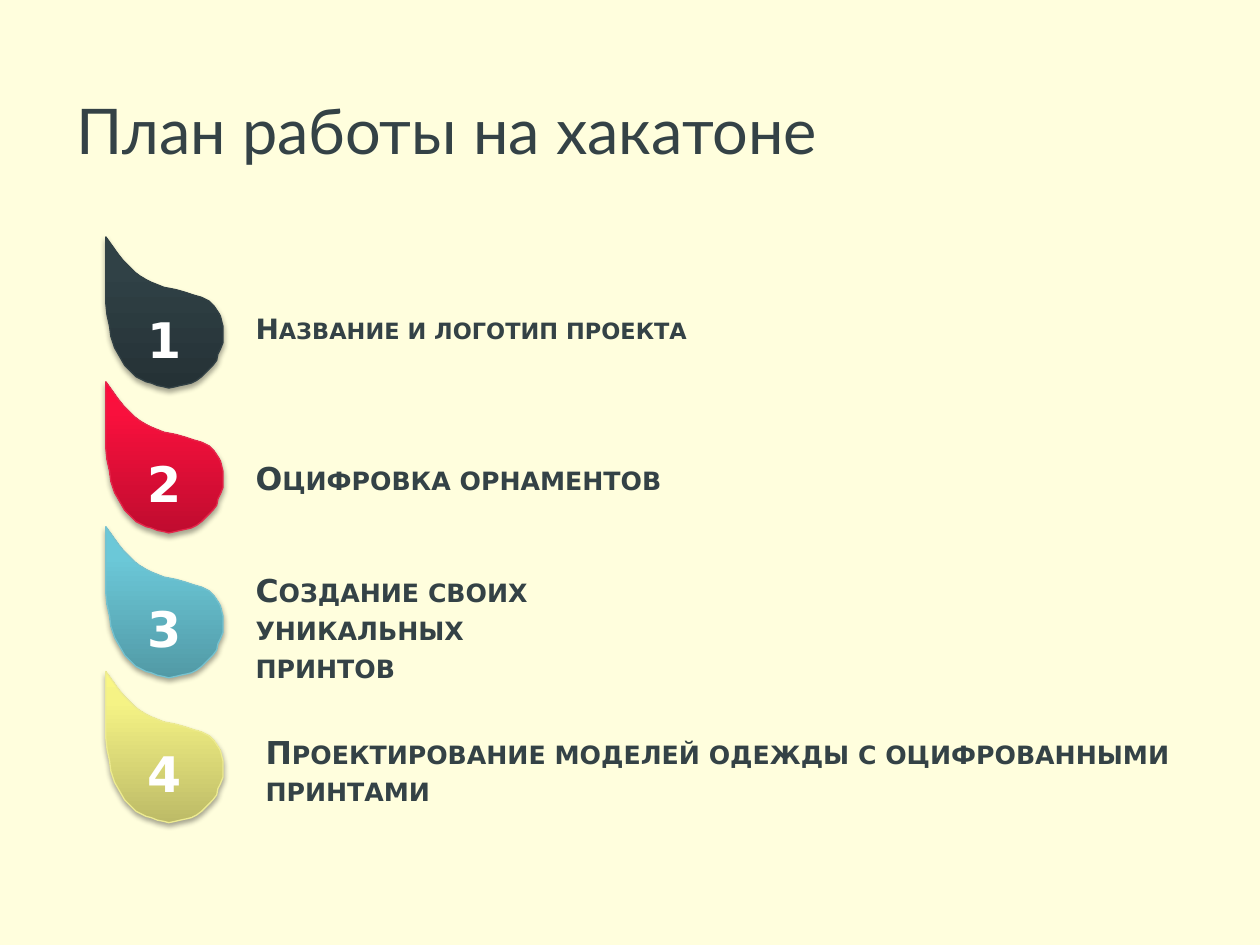
"""Build a slide that lists the four steps of the hackathon plan beside coloured drops."""
from copy import deepcopy

from lxml.etree import SubElement
from pptx import Presentation
from pptx.dml.color import RGBColor
from pptx.enum.shapes import MSO_SHAPE
from pptx.enum.text import MSO_ANCHOR, MSO_AUTO_SIZE, PP_ALIGN
from pptx.oxml.ns import qn
from pptx.util import Inches, Pt

TITLE = "План работы на хакатоне"
STEPS = [
    {"lines": ["Название и логотип проекта"], "drop": "slate",
     "size": 16, "place": (19.3, 32.27, 37, 4.93), "wrap": False},
    {"lines": ["Оцифровка орнаментов"], "drop": "red",
     "size": 18, "place": (19.3, 47.87, 34.3, 5.33), "wrap": False},
    {"lines": ["Создание своих уникальных принтов"], "drop": "teal",
     "size": 18, "place": (19.3, 59.73, 25.4, 13.47), "wrap": True},
    {"lines": ["Проектирование моделей одежды с оцифрованными", "принтами"], "drop": "yellow",
     "size": 18, "place": (20.1, 76.8, 75.6, 9.47), "wrap": True, "align": PP_ALIGN.JUSTIFY},
]
COLOURS = {"paper": "FFFEDD", "ink": "344246", "number": "FFFFFF", "shadow": "000000"}
DROPS = {
    "slate": {"line": "324145", "stops": ["253236", "304146", "304247"]},
    "red": {"line": "E4274B", "stops": ["C00C2F", "F9103D", "FE0B3B"]},
    "teal": {"line": "76C2CF", "stops": ["529AA6", "6BC8D8", "69CADB"]},
    "yellow": {"line": "EDEB91", "stops": ["BDBB67", "F5F385", "F9F684"]},
}
STOP_POSITIONS = [0, 0.8, 1]
DROP_OUTLINE = [
    (0, 0), (10, 14), (14, 19), (19, 24), (23, 28), (27, 31), (32, 34), (36, 36),
    (41, 38), (46, 40), (51, 41), (56, 42), (63, 44), (69, 46), (76, 48), (82, 51),
    (84, 53), (86, 55), (88, 58), (90, 61), (91, 63), (92, 67), (93, 71), (93, 75),
    (93, 80), (93, 84), (91, 89), (89, 93), (88, 98), (85, 102), (82, 105), (79, 108),
    (76, 111), (72, 114), (68, 116), (64, 117), (59, 118), (55, 119), (50, 119.5),
    (46, 119), (41, 118), (36, 116), (32, 115), (28, 113), (24, 111), (21, 108),
    (18, 105), (15, 102), (11, 95), (7, 88), (4, 79), (3, 71), (1, 62), (0, 53), (0, 34),
]
WIDTH, HEIGHT = Inches(10), Inches(7.5)
TITLE_PLACE = (5.1, 8, 71, 11.33)
DROP_LEFT, FIRST_ROW, ROW_STEP = 8.4, 25.07, 15.33
FONT_TITLE = {"name": "Lato", "size": Pt(36), "bold": False}
FONT_NUMBER = {"name": "DejaVu Sans", "size": Pt(28), "bold": True}
FONT_LABEL = {"name": "DejaVu Sans", "bold": True}


def across(percent):
    return round(WIDTH * percent / 100)


def down(percent):
    return round(HEIGHT * percent / 100)


def apply(target, values):
    for name, value in values.items():
        setattr(target, name, value)


def write(frame, lines, font, colour, align=PP_ALIGN.LEFT, small_caps=False):
    for index, line in enumerate(lines):
        para = frame.add_paragraph() if index else frame.paragraphs[0]
        para.alignment = align
        span = para.add_run()
        span.text = line
        apply(span.font, font)
        span.font.color.rgb = RGBColor.from_string(COLOURS[colour])
        if small_caps:
            span.font._element.set("cap", "small")


def add_text(page, place, lines, font, layout, **style):
    left, top, width, height = place
    box = page.shapes.add_textbox(across(left), down(top), across(width), down(height))
    apply(box.text_frame, {"vertical_anchor": MSO_ANCHOR.MIDDLE, **layout})
    write(box.text_frame, lines, font, "ink", **style)


def add_shadow(shape):
    shape.shadow.inherit = False
    effects = shape._element.spPr.find(qn("a:effectLst"))
    shadow = SubElement(effects, qn("a:outerShdw"), blurRad=str(Pt(3.1)),
                        dist=str(Pt(1.8)), dir="5400000", rotWithShape="0")
    colour = SubElement(shadow, qn("a:srgbClr"), val=COLOURS["shadow"])
    SubElement(colour, qn("a:alpha"), val="35000")


def add_drop(page, number, top, look):
    builder = page.shapes.build_freeform(*DROP_OUTLINE[0], scale=WIDTH / 1000)
    builder.add_line_segments(DROP_OUTLINE[1:], close=True)
    drop = builder.convert_to_shape(across(DROP_LEFT), down(top))
    drop.fill.gradient()
    drop.fill.gradient_angle = 90
    stop_list = next(drop._element.iter(qn("a:gsLst")))
    stop_list.append(deepcopy(stop_list[-1]))
    for stop, position, colour in zip(drop.fill.gradient_stops, STOP_POSITIONS, look["stops"]):
        stop.position = position
        stop.color.rgb = RGBColor.from_string(colour)
    drop.line.color.rgb = RGBColor.from_string(look["line"])
    drop.line.width = Pt(0.75)
    add_shadow(drop)
    apply(drop.text_frame, {
        "vertical_anchor": MSO_ANCHOR.BOTTOM, "word_wrap": True,
        "margin_left": Inches(0.1), "margin_right": Inches(0.1),
        "margin_top": Inches(0.05), "margin_bottom": Inches(0.16),
    })
    write(drop.text_frame, [str(number)], FONT_NUMBER, "number", PP_ALIGN.CENTER)


def main():
    deck = Presentation()
    apply(deck, {"slide_width": WIDTH, "slide_height": HEIGHT})
    page = deck.slides.add_slide(deck.slide_layouts[6])
    paper = page.shapes.add_shape(MSO_SHAPE.RECTANGLE, 0, 0, WIDTH, HEIGHT)
    paper.shadow.inherit = False
    paper.fill.solid()
    paper.fill.fore_color.rgb = RGBColor.from_string(COLOURS["paper"])
    paper.line.fill.background()
    add_text(page, TITLE_PLACE, [TITLE], FONT_TITLE, {"word_wrap": True})
    for row, step in enumerate(STEPS):
        add_drop(page, row + 1, FIRST_ROW + row * ROW_STEP, DROPS[step["drop"]])
        add_text(page, step["place"], step["lines"], {**FONT_LABEL, "size": Pt(step["size"])},
                 {"word_wrap": step["wrap"], "auto_size": MSO_AUTO_SIZE.SHAPE_TO_FIT_TEXT},
                 align=step.get("align", PP_ALIGN.LEFT), small_caps=True)
    deck.save("out.pptx")


if __name__ == "__main__":
    main()
